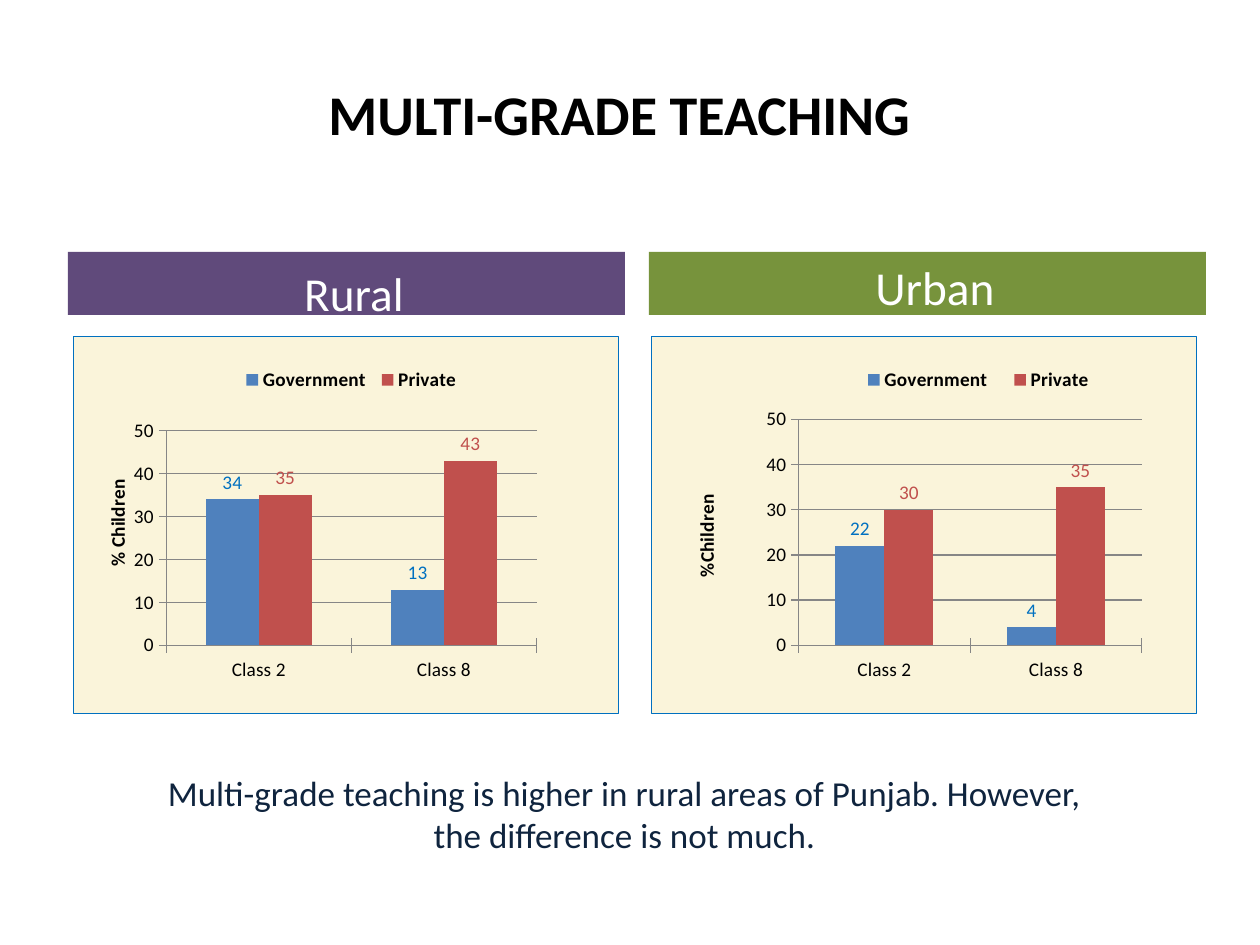
from dataclasses import dataclass

from lxml.etree import SubElement
from pptx import Presentation
from pptx.chart.data import CategoryChartData as Data
from pptx.dml.color import RGBColor as Rgb
from pptx.enum.chart import XL_CHART_TYPE as Kind
from pptx.enum.chart import XL_LABEL_POSITION as Spot
from pptx.enum.chart import XL_LEGEND_POSITION as Side
from pptx.enum.chart import XL_TICK_MARK as Tick
from pptx.enum.shapes import MSO_SHAPE as Form
from pptx.enum.text import MSO_ANCHOR as Anchor
from pptx.enum.text import MSO_AUTO_SIZE as Fit
from pptx.enum.text import PP_ALIGN as Align
from pptx.oxml import parse_xml
from pptx.oxml.ns import nsdecls, qn
from pptx.util import Pt


@dataclass(frozen=True)
class Theme:
    face: str = "Calibri"
    ink: str = "000000"
    white: str = "FFFFFF"
    navy: str = "0F243E"
    violet: str = "604A7B"
    green: str = "77933C"
    cream: str = "FAF4DA"
    edge: str = "0070C0"
    grid: str = "868686"
    bars: tuple = ("4F81BD", "C0504D")
    tags: tuple = ("0070C0", "C0504D")
    title: int = 32
    head: int = 27
    body: int = 20
    small: int = 11


THEME = Theme()
SCALE = 914400 / 126


def px(n):
    return round(n * SCALE)


def box(*dims):
    return [px(n) for n in dims]


def style(font, size, color, bold=False):
    font.name = THEME.face
    font.size = Pt(size)
    font.bold = bold
    font.color.rgb = Rgb.from_string(color)


def write(shape, text, size, color, bold=False):
    frame = shape.text_frame
    frame.text = text
    frame.word_wrap = True
    para = frame.paragraphs[0]
    para.alignment = Align.CENTER
    style(para.runs[0].font, size, color, bold)
    return para


def add_title(slide, text):
    shape = slide.shapes.title
    shape.left, shape.top, shape.width, shape.height = box(231, 73, 777, 81)
    write(shape, text, THEME.title, THEME.ink, True)
    shape.text_frame.auto_size = Fit.NONE
    shape.text_frame.vertical_anchor = Anchor.MIDDLE


def add_block(slide, form, dims, fill=None):
    shape = slide.shapes.add_shape(form, *box(*dims))
    shape.shadow.inherit = False
    shape.line.fill.background()
    if fill:
        shape.fill.solid()
        shape.fill.fore_color.rgb = Rgb.from_string(fill)
    else:
        shape.fill.background()
    return shape


def add_head(slide, left, text, fill, lead):
    shape = add_block(slide, Form.RECTANGLE, (left, 252, 557, 63), fill)
    para = write(shape, text, THEME.head, THEME.white)
    para.line_spacing = lead
    props = para._p.get_or_add_pPr()
    props.set("marL", str(px(50)))
    props.set("indent", str(px(-35)))
    shape.text_frame.vertical_anchor = Anchor.TOP


def add_note(slide, text):
    shape = add_block(slide, Form.ROUNDED_RECTANGLE, (147, 777, 955, 73))
    write(shape, text, THEME.body, THEME.navy)
    shape.text_frame.vertical_anchor = Anchor.MIDDLE


def place(node, index, area, inner=False):
    for old in node.findall(qn("c:layout")):
        node.remove(old)
    layout = node.makeelement(qn("c:layout"))
    node.insert(index, layout)
    manual = SubElement(layout, qn("c:manualLayout"))
    pairs = [("layoutTarget", "inner")] if inner else []
    pairs += [("xMode", "edge"), ("yMode", "edge")]
    pairs += zip("xywh", area)
    for tag, value in pairs:
        SubElement(manual, qn("c:" + tag)).set("val", str(value))


def paint(chart):
    node = parse_xml(
        f'<c:spPr {nsdecls("c", "a")}>'
        f'<a:solidFill><a:srgbClr val="{THEME.cream}"/></a:solidFill>'
        f'<a:ln w="{Pt(0.75)}"><a:solidFill><a:srgbClr val="{THEME.edge}"/>'
        "</a:solidFill></a:ln></c:spPr>"
    )
    chart.element.find(qn("c:chart")).addnext(node)


def set_axes(chart, label, spot):
    grey = Rgb.from_string(THEME.grid)
    for axis in (chart.category_axis, chart.value_axis):
        axis.major_tick_mark = Tick.CROSS
        axis.minor_tick_mark = Tick.NONE
        axis.format.line.color.rgb = grey
    axis = chart.value_axis
    axis.minimum_scale, axis.maximum_scale, axis.major_unit = 0, 50, 10
    axis.has_major_gridlines = True
    axis.major_gridlines.format.line.color.rgb = grey
    title = axis.axis_title
    title.text_frame.text = label
    run = title.text_frame.paragraphs[0].runs[0]
    style(run.font, THEME.small, THEME.ink, True)
    place(title._element, 1, spot)


def add_chart(slide, left, label, rows, plot, key, spot):
    data = Data()
    data.categories = ["Class 2", "Class 8"]
    for name, vals in zip(("Government", "Private"), rows):
        data.add_series(name, vals)
    chart = slide.shapes.add_chart(
        Kind.COLUMN_CLUSTERED, *box(left, 336, 546, 378), data
    ).chart
    chart.has_title = False
    style(chart.font, THEME.small, THEME.ink)
    paint(chart)
    set_axes(chart, label, spot)
    chart.has_legend = True
    chart.legend.position = Side.RIGHT
    chart.legend.include_in_layout = False
    style(chart.legend.font, THEME.small, THEME.ink, True)
    place(chart.legend._element, 1, key)
    place(chart.element.find(".//" + qn("c:plotArea")), 0, plot, True)
    bars = chart.plots[0]
    bars.gap_width, bars.overlap = 150, 0
    bars.vary_by_categories = False
    for series, fill, tag in zip(bars.series, THEME.bars, THEME.tags):
        series.format.fill.solid()
        series.format.fill.fore_color.rgb = Rgb.from_string(fill)
        labels = series.data_labels
        labels.show_value = True
        labels.position = Spot.OUTSIDE_END
        style(labels.font, THEME.small, tag)


def main():
    deck = Presentation()
    deck.slide_width, deck.slide_height = box(1260, 945)
    slide = deck.slides.add_slide(deck.slide_layouts[5])
    add_title(slide, "MULTI-GRADE TEACHING")
    add_head(slide, 68, "Rural", THEME.violet, 1.1)
    add_head(slide, 649, "Urban", THEME.green, 1.0)
    add_note(
        slide,
        "Multi-grade teaching is higher in rural areas of Punjab. "
        "However, the difference is not much.",
    )
    add_chart(
        slide, 651, "%Children", [(22, 4), (30, 35)],
        plot=(0.27, 0.22, 0.63, 0.6),
        key=(0.36, 0.08, 0.48, 0.07),
        spot=(0.07, 0.41),
    )
    add_chart(
        slide, 73, "% Children", [(34, 13), (35, 43)],
        plot=(0.17, 0.25, 0.68, 0.57),
        key=(0.3, 0.08, 0.42, 0.07),
        spot=(0.05, 0.37),
    )
    deck.save("out.pptx")


if __name__ == "__main__":
    main()
